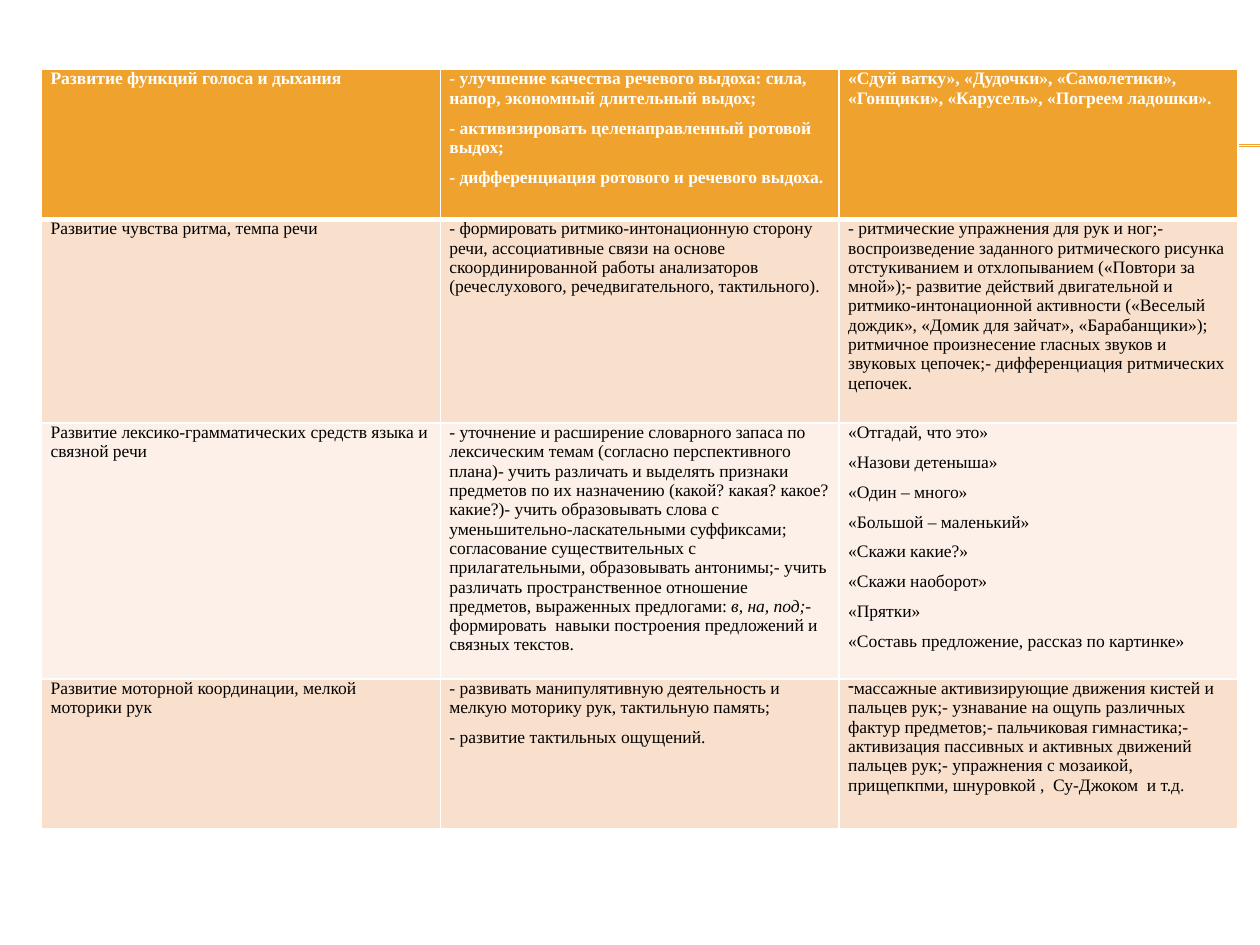
from lxml.etree import Element, SubElement
from pptx import Presentation
from pptx.dml.color import RGBColor
from pptx.enum.shapes import MSO_CONNECTOR as Connector
from pptx.oxml.ns import qn
from pptx.util import Cm, Pt

ORANGE = RGBColor(0xF0, 0xA2, 0x2E)
PEACH = RGBColor(0xF9, 0xE0, 0xCD)
CREAM = RGBColor(0xFC, 0xF0, 0xE8)
WHITE = RGBColor(0xFF, 0xFF, 0xFF)
BLACK = RGBColor(0x00, 0x00, 0x00)

ROW_HEIGHTS = [3.02, 4.11, 5.16, 3.02]
ROW_FILLS = [ORANGE, PEACH, CREAM, PEACH]
COLUMN_WIDTH = 8.04
RULE_HEIGHTS = [2.92, 2.95]
CELL_FORMAT = {
    "margin_left": Cm(0.18),
    "margin_right": Cm(0.18),
    "margin_top": 0,
    "margin_bottom": 0,
}
BODY_FONT = {"name": "Times New Roman", "size": Pt(10), "bold": False}
HEADER_FONT = {**BODY_FONT, "bold": True}

BULLET = "•"
ITALIC = "*"

ROWS = [
    [
        ["Развитие функций голоса и дыхания"],
        [
            "- улучшение качества речевого выдоха: сила, напор, экономный длительный выдох;",
            "- активизировать целенаправленный ротовой выдох;",
            "- дифференциация ротового и речевого выдоха.",
        ],
        ["«Сдуй ватку», «Дудочки», «Самолетики», «Гонщики», «Карусель», «Погреем ладошки»."],
    ],
    [
        ["Развитие чувства ритма, темпа речи"],
        [
            "- формировать ритмико-интонационную сторону речи, ассоциативные связи "
            "на основе скоординированной работы анализаторов (речеслухового, "
            "речедвигательного, тактильного)."
        ],
        [
            "- ритмические упражнения для рук и ног;- воспроизведение заданного "
            "ритмического рисунка отстукиванием и отхлопыванием («Повтори за мной»);- "
            "развитие действий двигательной и ритмико-интонационной активности "
            "(«Веселый дождик», «Домик для зайчат», «Барабанщики»); ритмичное "
            "произнесение гласных звуков и звуковых цепочек;- дифференциация "
            "ритмических цепочек."
        ],
    ],
    [
        ["Развитие лексико-грамматических средств языка и связной речи"],
        [
            "- уточнение и расширение словарного запаса по лексическим темам (согласно "
            "перспективного плана)- учить различать и выделять признаки предметов по их "
            "назначению (какой? какая? какое? какие?)- учить образовывать слова с "
            "уменьшительно-ласкательными суффиксами; согласование существительных с "
            "прилагательными, образовывать антонимы;- учить различать пространственное "
            "отношение предметов, выраженных предлогами: *в, на, под;- *"
            "формировать  навыки построения предложений и связных текстов."
        ],
        [
            "«Отгадай, что это»",
            "«Назови детеныша»",
            "«Один – много»",
            "«Большой – маленький»",
            "«Скажи какие?»",
            "«Скажи наоборот»",
            "«Прятки»",
            "«Составь предложение, рассказ по картинке»",
        ],
    ],
    [
        ["Развитие моторной координации, мелкой моторики рук"],
        [
            "- развивать манипулятивную деятельность и мелкую моторику рук, тактильную память;",
            "- развитие тактильных ощущений.",
        ],
        [
            "•массажные активизирующие движения кистей и пальцев рук;- узнавание на ощупь "
            "различных фактур предметов;- пальчиковая гимнастика;- активизация пассивных "
            "и активных движений пальцев рук;- упражнения с мозаикой, прищепкпми, "
            "шнуровкой ,  Су-Джоком  и т.д."
        ],
    ],
]


def apply_format(target, values):
    for name, value in values.items():
        setattr(target, name, value)


def add_rule(slide, height):
    connector = slide.shapes.add_connector(
        Connector.STRAIGHT, Cm(1.42), Cm(height), Cm(25.4), Cm(height)
    )
    connector.line.color.rgb = ORANGE
    connector.line.width = Pt(0.75)
    SubElement(connector._element.spPr, qn("a:effectLst"))


def set_borders(cell, widths):
    properties = cell._tc.get_or_add_tcPr()
    for index, (side, width) in enumerate(widths.items()):
        border = Element(qn(f"a:ln{side}"), w=str(Pt(width)))
        fill = SubElement(border, qn("a:solidFill"))
        SubElement(fill, qn("a:srgbClr"), val=str(WHITE))
        properties.insert(index, border)


def set_dash_bullet(paragraph):
    properties = paragraph._p.get_or_add_pPr()
    properties.set("marL", "0")
    properties.set("indent", "0")
    SubElement(properties, qn("a:buChar"), char="-")


def write_paragraph(paragraph, text, font_format, color):
    paragraph.space_after = Pt(6)
    if text.startswith(BULLET):
        set_dash_bullet(paragraph)
    for index, part in enumerate(text.lstrip(BULLET).split(ITALIC)):
        run = paragraph.add_run()
        run.text = part
        apply_format(run.font, {**font_format, "italic": index % 2 == 1})
        run.font.color.rgb = color


def fill_cell(cell, texts, row_index):
    is_header = row_index == 0
    apply_format(cell, CELL_FORMAT)
    cell.fill.solid()
    cell.fill.fore_color.rgb = ROW_FILLS[row_index]
    top = 3 if row_index == 1 else 1
    bottom = 3 if is_header else 1
    set_borders(cell, {"L": 1, "R": 1, "T": top, "B": bottom})
    frame = cell.text_frame
    for index, text in enumerate(texts):
        paragraph = frame.add_paragraph() if index else frame.paragraphs[0]
        write_paragraph(
            paragraph,
            text,
            HEADER_FONT if is_header else BODY_FONT,
            WHITE if is_header else BLACK,
        )


def add_exercise_table(slide):
    column_count = len(ROWS[0])
    table = slide.shapes.add_table(
        len(ROWS), column_count, Cm(0.84), Cm(1.4),
        Cm(COLUMN_WIDTH * column_count), Cm(sum(ROW_HEIGHTS)),
    ).table
    for column in table.columns:
        column.width = Cm(COLUMN_WIDTH)
    for row_index, row_texts in enumerate(ROWS):
        table.rows[row_index].height = Cm(ROW_HEIGHTS[row_index])
        for column_index, texts in enumerate(row_texts):
            fill_cell(table.cell(row_index, column_index), texts, row_index)


def main():
    presentation = Presentation()
    presentation.slide_width = Cm(25.4)
    presentation.slide_height = Cm(19.05)
    slide = presentation.slides.add_slide(presentation.slide_layouts[6])
    for height in RULE_HEIGHTS:
        add_rule(slide, height)
    add_exercise_table(slide)
    presentation.save("out.pptx")


if __name__ == "__main__":
    main()
